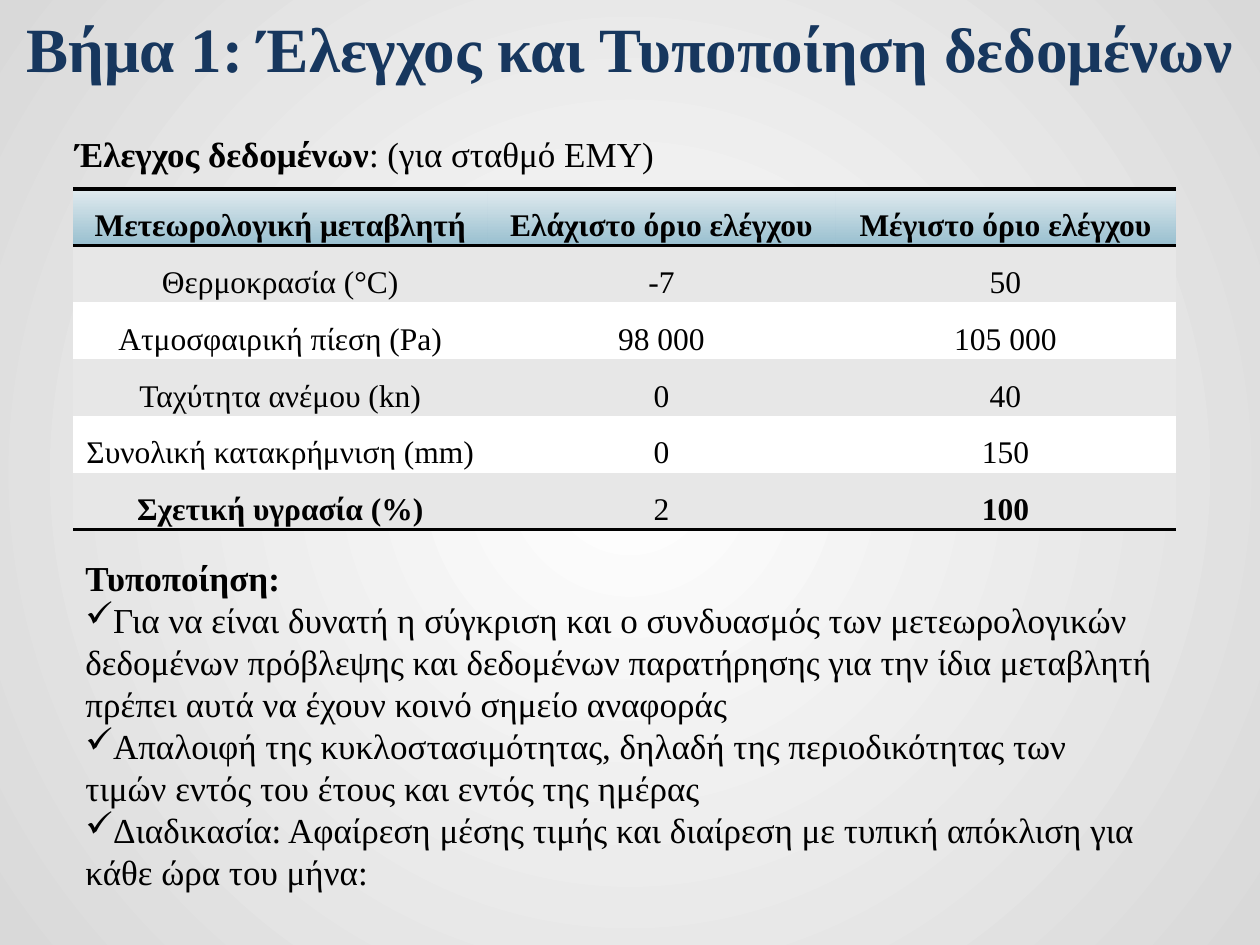
"""Build the slide on checking and standardising meteorological data."""
from lxml.etree import SubElement
from pptx import Presentation
from pptx.dml.color import RGBColor
from pptx.enum.text import MSO_ANCHOR, PP_ALIGN
from pptx.oxml import parse_xml
from pptx.oxml.ns import nsdecls, qn
from pptx.util import Inches, Pt

COLORS = {"title": "17375E", "text": "000000", "line": "000000",
          "band": "E7E7E7", "plain": "FFFFFF",
          "head_bottom": "98BFCF", "head_top": "E1EBEF",
          "bg_center": "FFFFFF", "bg_edge": "D9D9D9"}
NO_STYLE = "{2D5ABB26-0587-4C30-8999-92F81FD0307C}"
ROWS = [
    ("Μετεωρολογική μεταβλητή", "Ελάχιστο όριο ελέγχου", "Μέγιστο όριο ελέγχου"),
    ("Θερμοκρασία (°C)", "-7", "50"),
    ("Ατμοσφαιρική πίεση (Pa)", "98 000", "105 000"),
    ("Ταχύτητα ανέμου (kn)", "0", "40"),
    ("Συνολική κατακρήμνιση (mm)", "0", "150"),
    ("Σχετική υγρασία (%)", "2", "100"),
]
BOLD_CELLS = {(0, 0), (0, 1), (0, 2), (5, 0), (5, 2)}
BULLETS = [
    "Για να είναι δυνατή η σύγκριση και ο συνδυασμός των μετεωρολογικών "
    "δεδομένων πρόβλεψης και δεδομένων παρατήρησης για την ίδια μεταβλητή "
    "πρέπει αυτά να έχουν κοινό σημείο αναφοράς",
    "Απαλοιφή της κυκλοστασιμότητας, δηλαδή της περιοδικότητας των τιμών "
    "εντός του έτους και εντός της ημέρας",
    "Διαδικασία: Αφαίρεση μέσης τιμής και διαίρεση με τυπική απόκλιση για "
    "κάθε ώρα του μήνα:",
]
TEXTS = [
    {"box": (0, 0, 10, 0.75), "anchor": MSO_ANCHOR.MIDDLE, "align": PP_ALIGN.CENTER,
     "size": 36, "color": "title",
     "paras": [[("Βήμα 1: Έλεγχος και Τυποποίηση δεδομένων", True)]]},
    {"box": (0.58, 4.37, 8.67, 2.79), "anchor": MSO_ANCHOR.TOP, "align": PP_ALIGN.LEFT,
     "size": 20, "color": "text",
     "paras": [[("Τυποποίηση:", True)]] + [[(b, False)] for b in BULLETS]},
    {"box": (0.5, 1, 8.67, 0.44), "anchor": MSO_ANCHOR.TOP, "align": PP_ALIGN.LEFT,
     "size": 20, "color": "text",
     "paras": [[("Έλεγχος δεδομένων", True), (": (για σταθμό EMY)", False)]]},
]


def add_run(p, text, size, color, bold):
    r = p.add_run()
    r.text = text
    for name, value in {"name": "Times New Roman", "size": Pt(size), "bold": bold}.items():
        setattr(r.font, name, value)
    r.font.color.rgb = RGBColor.from_string(COLORS[color])


def set_gradient(fill, start, end):
    fill.gradient()
    for stop, color in zip(fill.gradient_stops, (start, end)):
        stop.color.rgb = RGBColor.from_string(COLORS[color])


prs = Presentation()
prs.slide_width, prs.slide_height = Inches(10), Inches(7.5)
s = prs.slides.add_slide(prs.slide_layouts[6])
set_gradient(s.background.fill, "bg_center", "bg_edge")
lin = next(s.background._cSld.iter(qn("a:lin")))
lin.getparent().replace(lin, parse_xml(
    f'<a:path {nsdecls("a")} path="circle">'
    '<a:fillToRect l="50000" t="50000" r="50000" b="50000"/></a:path>'))

for t in TEXTS:
    tf = s.shapes.add_textbox(*map(Inches, t["box"])).text_frame
    tf.word_wrap = True
    tf.vertical_anchor = t["anchor"]
    for i, runs in enumerate(t["paras"]):
        p = tf.add_paragraph() if i else tf.paragraphs[0]
        p.alignment = t["align"]
        if i:
            SubElement(p._p.get_or_add_pPr(), qn("a:buChar"), char="✓")
        for text, bold in runs:
            add_run(p, text, t["size"], t["color"], bold)

last = len(ROWS) - 1
table = s.shapes.add_table(len(ROWS), 3, Inches(0.58), Inches(1.5),
                           Inches(8.75), Inches(2.7)).table
table.first_row = table.horz_banding = False
table._tbl.tblPr.find(qn("a:tableStyleId")).text = NO_STYLE
for col, width in zip(table.columns, (3.29, 2.76, 2.7)):
    col.width = Inches(width)
for i, row in enumerate(ROWS):
    table.rows[i].height = Inches(0.45)
    for j, text in enumerate(row):
        cell = table.cell(i, j)
        for name, value in {"margin_left": Inches(0.07), "margin_right": Inches(0.07),
                            "margin_top": 0, "margin_bottom": 0,
                            "vertical_anchor": MSO_ANCHOR.MIDDLE}.items():
            setattr(cell, name, value)
        p = cell.text_frame.paragraphs[0]
        p.alignment, p.line_spacing = PP_ALIGN.CENTER, 1.5
        add_run(p, text, 18, "text", (i, j) in BOLD_CELLS)
        for edge in {0: ("lnT", "lnB"), last: ("lnB",)}.get(i, ()):
            ln = SubElement(cell._tc.get_or_add_tcPr(), qn(f"a:{edge}"), w=str(Pt(2)))
            SubElement(SubElement(ln, qn("a:solidFill")), qn("a:srgbClr"), val=COLORS["line"])
        if i == 0:
            set_gradient(cell.fill, "head_bottom", "head_top")
            cell.fill.gradient_angle = 90
        else:
            cell.fill.solid()
            cell.fill.fore_color.rgb = RGBColor.from_string(COLORS["band" if i % 2 else "plain"])

prs.save("out.pptx")
